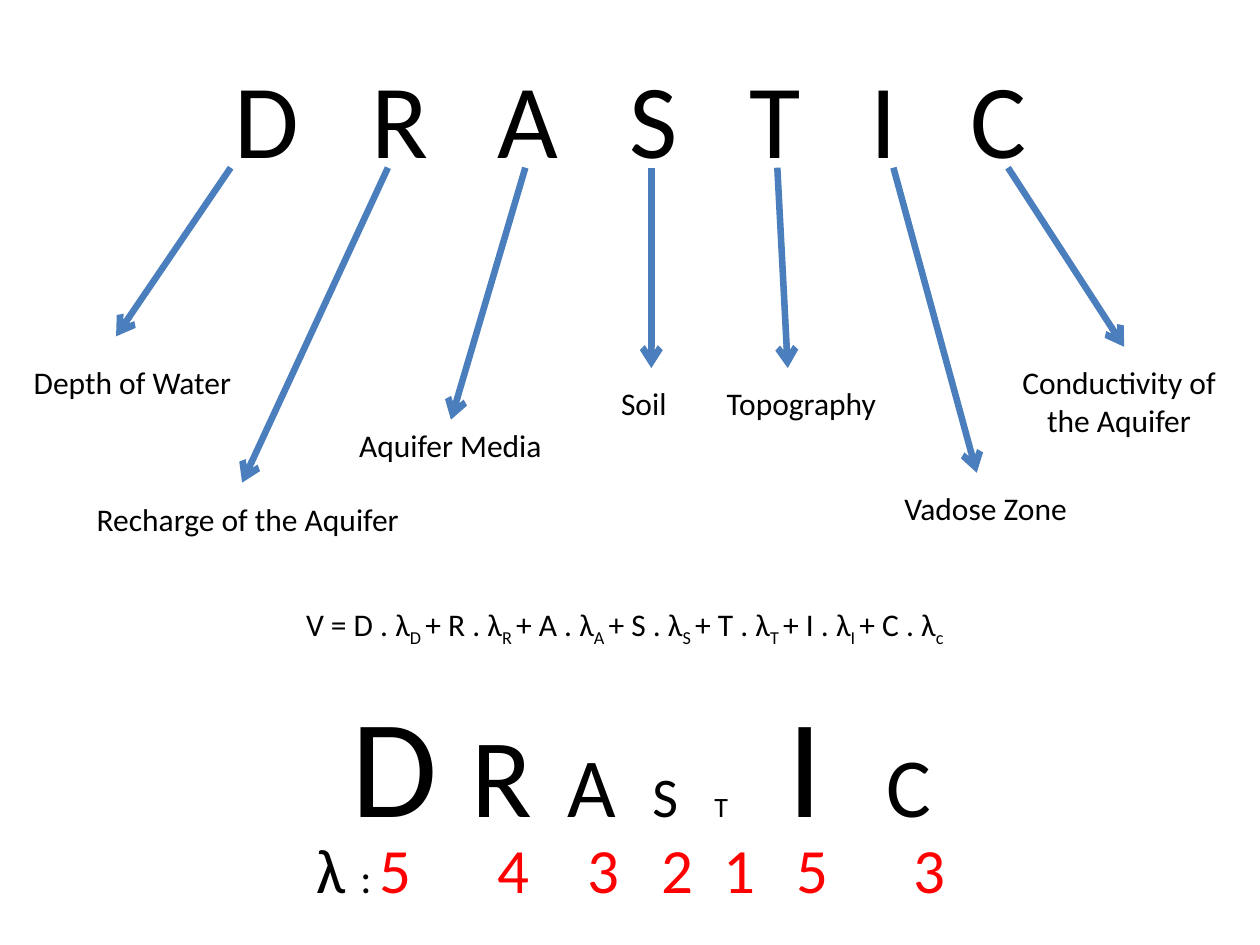
import pptx
import pptx.util
import pptx.dml.color
import pptx.enum.shapes
import pptx.enum.text
import pptx.oxml.ns
from lxml import etree

Cm = pptx.util.Cm
ALIGN = pptx.enum.text.PP_ALIGN
INSET = 0.25  # text box side margin, cm

LETTERS = "DRASTIC"
WEIGHTS = [5, 4, 3, 2, 1, 5, 3]

# arrow start x, arrow end (x, y), label, label (left, top, width), alignment
FACTORS = [
    (4.65, (2.34, 3.4), "Depth of Water", (0.43, 3.81, 5.51), ALIGN.LEFT),
    (7.82, (4.88, 6.35), "Recharge of the Aquifer", (1.7, 6.58, 6.78), ALIGN.LEFT),
    (10.59, (9.09, 5.08), "Aquifer Media", (6.99, 5.08, 4.65), ALIGN.LEFT),
    (13.13, (13.13, 4.04), "Soil", (12.27, 4.24, 1.47), ALIGN.LEFT),
    (15.67, (15.88, 4.04), "Topography", (14.4, 4.24, 3.81), ALIGN.LEFT),
    (18.01, (19.69, 6.15), "Vadose Zone", (17.98, 6.35, 4.01), ALIGN.LEFT),
    (20.32, (22.66, 3.61), "Conductivity of the Aquifer", (20.12, 3.81, 4.88), ALIGN.CENTER),
]


def color(hex_string):
    return pptx.dml.color.RGBColor.from_string(hex_string)


def add_run(paragraph, text, size=18, fill="000000", baseline=0):
    run = paragraph.add_run()
    run.text = text
    run.font.name = "Calibri"
    run.font.size = pptx.util.Pt(size)
    run.font.color.rgb = color(fill)
    if baseline:
        run.font._element.set("baseline", str(baseline * 1000))


def add_paragraph_box(slide, left, top, width, height, align=ALIGN.LEFT):
    frame = slide.shapes.add_textbox(Cm(left), Cm(top), Cm(width), Cm(height)).text_frame
    frame.word_wrap = True
    paragraph = frame.paragraphs[0]
    paragraph.alignment = align
    return paragraph


def set_center_tabs(paragraph, centers):
    """Centre each tabbed item on a distance from the box's left edge."""
    tabs = etree.SubElement(paragraph._p.get_or_add_pPr(), pptx.oxml.ns.qn("a:tabLst"))
    for center in centers:
        etree.SubElement(tabs, pptx.oxml.ns.qn("a:tab"),
                         pos=str(Cm(center - INSET)), algn="ctr")


def add_arrow(slide, start, end):
    arrow = slide.shapes.add_connector(
        pptx.enum.shapes.MSO_CONNECTOR.STRAIGHT, *map(Cm, start + end))
    arrow.line.color.rgb = color("4B7EBC")
    arrow.line.width = pptx.util.Pt(3.75)
    etree.SubElement(arrow.line._get_or_add_ln(), pptx.oxml.ns.qn("a:tailEnd"), type="arrow")
    etree.SubElement(arrow._element.spPr, pptx.oxml.ns.qn("a:effectLst"))


def place_title(slide, left, top, width, height):
    title = slide.shapes.title
    title.left, title.top, title.width, title.height = map(Cm, (left, top, width, height))
    frame = title.text_frame
    frame.auto_size = pptx.enum.text.MSO_AUTO_SIZE.NONE
    frame.vertical_anchor = pptx.enum.text.MSO_ANCHOR.MIDDLE
    paragraph = frame.paragraphs[0]
    paragraph.alignment = ALIGN.LEFT
    set_center_tabs(paragraph, [4.11, 6.79, 9.37, 11.91, 14.35, 16.55, 18.85])
    add_run(paragraph, "".join("\t" + letter for letter in LETTERS), size=60)


def place_factors(slide, left, top):
    for start_x, (end_x, end_y), label, (label_x, label_y, width), align in FACTORS:
        add_arrow(slide, (left + start_x, top), (left + end_x, top + end_y))
        height = 1.8 if align == ALIGN.CENTER else 1.03
        paragraph = add_paragraph_box(
            slide, left + label_x, top + label_y, width, height, align)
        add_run(paragraph, label)


def place_equation(slide, left, top, width, height):
    paragraph = add_paragraph_box(slide, left, top, width, height)
    lead = "V = "
    for letter, subscript in zip(LETTERS, ["D ", "R ", "A ", "S ", "T ", "I ", "c"]):
        add_run(paragraph, f"{lead}{letter} . λ")
        add_run(paragraph, subscript, baseline=-25)
        lead = "+ "


def place_weighted_word(slide, left, top, width, height):
    # Letters sized in proportion to their weight
    word = add_paragraph_box(slide, left, top, width, height)
    set_center_tabs(word, [6.05, 8.21, 10.02, 11.5, 12.63, 14.32, 16.42])
    for letter, weight in zip(LETTERS, WEIGHTS):
        add_run(word, "\t", size=18)
        add_run(word, letter, size=16 * weight)

    # Weights under the letters
    weights = add_paragraph_box(slide, left + 0.2, top + 3.07, width, 1.8)
    set_center_tabs(weights, [4.83, 5.87, 8.25, 10.05, 11.54, 12.79, 14.26, 16.62])
    add_run(weights, "\tλ ", size=36)
    add_run(weights, ":", size=24)
    add_run(weights, "".join(f"\t{weight}" for weight in WEIGHTS), size=36, fill="FF0000")


def main():
    deck = pptx.Presentation()
    deck.slide_width, deck.slide_height = Cm(25.4), Cm(19.05)
    slide = deck.slides.add_slide(deck.slide_layouts[5])
    place_title(slide, 1.27, 0.76, 22.86, 3.18)
    place_factors(slide, 0, 3.38)
    place_weighted_word(slide, 1.91, 13.54, 22.02, 3.68)
    place_equation(slide, 5.92, 12.07, 13.77, 1.03)
    deck.save("out.pptx")


if __name__ == "__main__":
    main()
